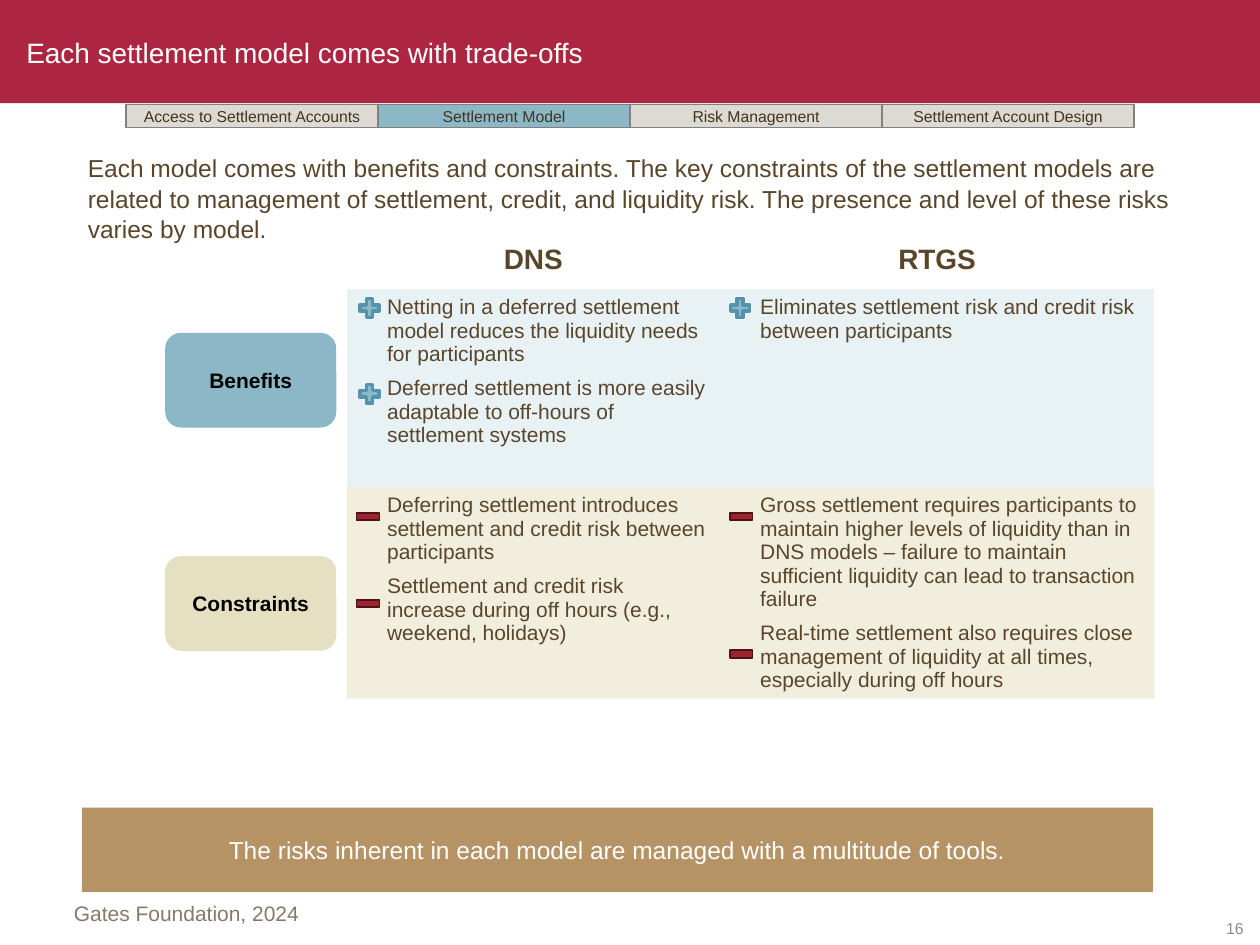
from lxml.etree import SubElement
from pptx import Presentation
from pptx.dml.color import RGBColor
from pptx.enum.shapes import MSO_SHAPE
from pptx.enum.text import MSO_ANCHOR, MSO_AUTO_SIZE, PP_ALIGN
from pptx.oxml.ns import qn
from pptx.util import Cm, Pt

COLOURS = {
    "crimson": "AC2641", "blue": "8CB7C7", "dark blue": "5393AB",
    "pale blue": "E8F1F4", "sand": "E6E0C2", "pale sand": "EEEAD6",
    "tan": "B69365", "grey": "DDD9D3", "mid grey": "808080",
    "red": "9B242D", "dark red": "4E1216", "brown": "59452A",
    "dark brown": "433420", "taupe": "857968", "number": "8C8C8C",
    "white": "FFFFFF", "black": "000000",
}
NO_STYLE_NO_GRID = "{2D5ABB26-0587-4C30-8999-92F81FD0307C}"


class SlideBuilder:
    font_name = "Arial"

    def __init__(self, slide):
        self.slide = slide

    def colour(self, name):
        return RGBColor.from_string(COLOURS[name])

    def add_text(self, paragraph, text, size, colour, bold=False, align=PP_ALIGN.LEFT):
        paragraph.alignment = align
        run = paragraph.add_run()
        run.text = text
        run.font.name = self.font_name
        run.font.size = Pt(size)
        run.font.bold = bold
        run.font.color.rgb = self.colour(colour)

    def frame(self, text_frame, anchor, side, edge):
        text_frame.word_wrap = True
        text_frame.auto_size = MSO_AUTO_SIZE.NONE
        text_frame.vertical_anchor = anchor
        text_frame.margin_left = text_frame.margin_right = Cm(side)
        text_frame.margin_top = text_frame.margin_bottom = Cm(edge)
        return text_frame.paragraphs[0]

    def placeholder(self, holder, box, text, size, colour, anchor, edge):
        holder.left, holder.top, holder.width, holder.height = map(Cm, box)
        paragraph = self.frame(holder.text_frame, anchor, 0.25, edge)
        properties = paragraph._p.get_or_add_pPr()
        properties.set("marL", "0")
        properties.set("indent", "0")
        SubElement(properties, qn("a:buNone"))
        paragraph.space_before = Pt(0)
        self.add_text(paragraph, text, size, colour)
        return paragraph

    def shape(self, kind, box, fill, line=None, width=1, parent=None):
        shape = (parent or self.slide).shapes.add_shape(kind, *map(Cm, box))
        shape.shadow.inherit = False
        shape.fill.solid()
        shape.fill.fore_color.rgb = self.colour(fill)
        if line:
            shape.line.color.rgb = self.colour(line)
            shape.line.width = Pt(width)
        else:
            shape.line.fill.background()
        return shape

    def label(self, shape, text, size, colour, bold=False, side=0.25):
        paragraph = self.frame(shape.text_frame, MSO_ANCHOR.MIDDLE, side, 0.13)
        self.add_text(paragraph, text, size, colour, bold, PP_ALIGN.CENTER)

    def text_box(self, box, text, size, colour, align, anchor, side, edge):
        text_box = self.slide.shapes.add_textbox(*map(Cm, box))
        paragraph = self.frame(text_box.text_frame, anchor, side, edge)
        self.add_text(paragraph, text, size, colour, align=align)

    def table(self, box, widths, heights):
        frame = self.slide.shapes.add_table(len(heights), len(widths), *map(Cm, box))
        table = frame.table
        table.first_row = table.horz_banding = False
        table._tbl.tblPr.find(qn("a:tableStyleId")).text = NO_STYLE_NO_GRID
        for column, width in zip(table.columns, widths):
            column.width = Cm(width)
        for row, height in zip(table.rows, heights):
            row.height = Cm(height)
        return table

    def list_cell(self, cell, points, fill, opacity):
        cell.fill.solid()
        cell.fill.fore_color.rgb = self.colour(fill)
        if opacity < 100:
            tint = cell._tc.tcPr.find(qn("a:solidFill"))[0]
            SubElement(tint, qn("a:alpha")).set("val", str(opacity * 1000))
        for index, point in enumerate(points):
            if index:
                paragraph = cell.text_frame.add_paragraph()
            else:
                paragraph = cell.text_frame.paragraphs[0]
            paragraph._p.get_or_add_pPr().set("marL", str(Cm(0.56)))
            paragraph.space_after = Pt(6)
            self.add_text(paragraph, point, 12, "brown")


def main():
    presentation = Presentation()
    presentation.slide_width, presentation.slide_height = Cm(25.4), Cm(19.05)
    slide = presentation.slides.add_slide(presentation.slide_layouts[1])
    builder = SlideBuilder(slide)
    title, body = slide.placeholders

    # Title band, sent behind the placeholders
    band = builder.shape(MSO_SHAPE.RECTANGLE, (0, 0, 25.4, 2.08), "crimson")
    slide.shapes._spTree.insert(2, band._element)
    builder.placeholder(title, (0.28, 0.71, 18.26, 0.69),
                        "Each settlement model comes with trade-offs",
                        16, "white", MSO_ANCHOR.MIDDLE, 0)

    # Introduction
    introduction = builder.placeholder(
        body, (1.52, 2.92, 22.38, 1.5),
        "Each model comes with benefits and constraints. The key constraints of the "
        "settlement models are related to management of settlement, credit, and "
        "liquidity risk. The presence and level of these risks varies by model.",
        14, "brown", MSO_ANCHOR.TOP, 0.13)
    introduction.line_spacing = 1.05

    # Section tabs
    tabs = slide.shapes.add_group_shape()
    sections = ["Access to Settlement Accounts", "Settlement Model",
                "Risk Management", "Settlement Account Design"]
    for index, section in enumerate(sections):
        fill = "blue" if section == "Settlement Model" else "grey"
        tab = builder.shape(MSO_SHAPE.RECTANGLE, (2.54 + 5.08 * index, 2.11, 5.08, 0.46),
                            fill, "mid grey", parent=tabs)
        builder.label(tab, section, 9, "dark brown", side=0)

    # Comparison of the two models
    comparison = builder.table((5.72, 4.8, 17.55, 9.27),
                               (1.27, 7.52, 8.76), (1.03, 3.99, 4.25))
    for column, model in enumerate(("DNS", "RTGS"), start=1):
        heading = comparison.cell(0, column).text_frame.paragraphs[0]
        builder.add_text(heading, model, 16, "brown", True, PP_ALIGN.CENTER)
    benefits = [
        ["Netting in a deferred settlement model reduces the liquidity needs for participants",
         "Deferred settlement is more easily adaptable to off-hours of settlement systems"],
        ["Eliminates settlement risk and credit risk between participants"],
    ]
    constraints = [
        ["Deferring settlement introduces settlement and credit risk between participants",
         "Settlement and credit risk increase during off hours (e.g., weekend, holidays)"],
        ["Gross settlement requires participants to maintain higher levels of liquidity than "
         "in DNS models – failure to maintain sufficient liquidity can lead to transaction "
         "failure",
         "Real-time settlement also requires close management of liquidity at all times, "
         "especially during off hours"],
    ]
    rows = [(benefits, "pale blue", 100), (constraints, "pale sand", 80)]
    for row, (models, fill, opacity) in enumerate(rows, start=1):
        for column, points in enumerate(models, start=1):
            builder.list_cell(comparison.cell(row, column), points, fill, opacity)

    # Row labels
    for name, top, fill in (("Benefits", 6.71, "blue"), ("Constraints", 11.21, "sand")):
        row_label = builder.shape(MSO_SHAPE.ROUNDED_RECTANGLE, (3.33, top, 3.45, 1.91), fill)
        builder.label(row_label, name, 12, "black", True)

    # Plus and minus markers
    for left, top in ((7.26, 6.02), (7.26, 7.75), (14.73, 6.02)):
        plus = builder.shape(MSO_SHAPE.CROSS, (left, top, 0.38, 0.38),
                             "blue", "dark blue", 2)
        plus.adjustments[0] = 0.33
    for left, top in ((7.19, 10.34), (7.19, 12.09), (14.71, 10.34), (14.71, 13.11)):
        builder.shape(MSO_SHAPE.RECTANGLE, (left, top, 0.46, 0.15), "red", "dark red")

    # Conclusion
    conclusion = builder.shape(MSO_SHAPE.RECTANGLE, (1.65, 16.28, 21.59, 1.7), "tan")
    builder.label(conclusion,
                  "The risks inherent in each model are managed with a multitude of tools.",
                  14, "white")

    # Source and slide number
    builder.text_box((1.24, 18.03, 8.59, 1.02), "Gates Foundation, 2024", 12, "taupe",
                     PP_ALIGN.LEFT, MSO_ANCHOR.TOP, 0.25, 0.13)
    builder.text_box((23.9, 18.03, 1.5, 1.02), "16", 9, "number",
                     PP_ALIGN.RIGHT, MSO_ANCHOR.BOTTOM, 0.33, 0.15)
    presentation.save("out.pptx")


if __name__ == "__main__":
    main()
